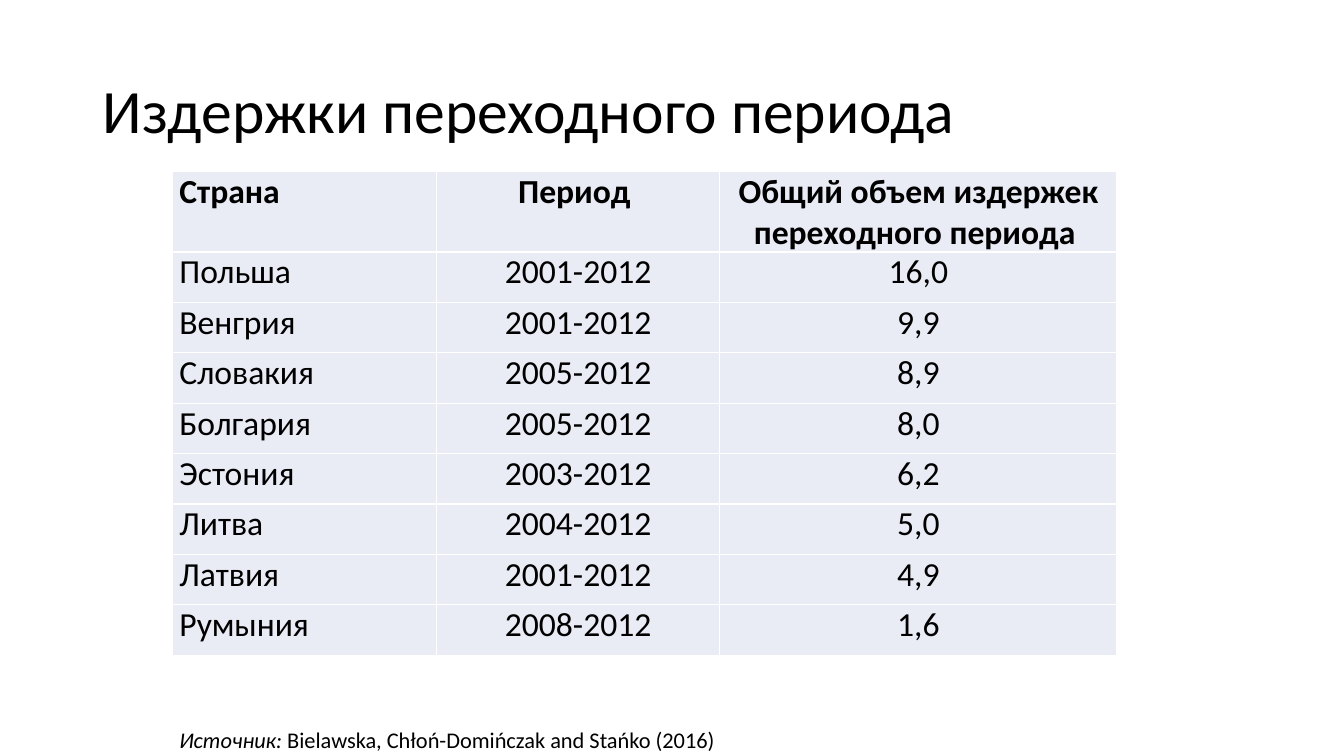
from pptx import Presentation
from pptx.dml.color import RGBColor
from pptx.enum.text import MSO_ANCHOR, PP_ALIGN
from pptx.oxml import parse_xml
from pptx.oxml.ns import nsdecls
from pptx.util import Inches, Pt

LEFT, CENTER = PP_ALIGN.LEFT, PP_ALIGN.CENTER
TOP, MIDDLE = MSO_ANCHOR.TOP, MSO_ANCHOR.MIDDLE

# Content
TITLE = "Издержки переходного периода"
HEADER = ("Страна", "Период ", "Общий объем издержек переходного периода ")
COSTS = [
    ("Польша", "2001-2012", "16,0"),
    ("Венгрия", "2001-2012", "9,9"),
    ("Словакия", "2005-2012", "8,9"),
    ("Болгария", "2005-2012", "8,0"),
    ("Эстония", "2003-2012", "6,2"),
    ("Литва", "2004-2012", "5,0"),
    ("Латвия", "2001-2012", "4,9"),
    ("Румыния", "2008-2012", "1,6"),
]
SOURCE = [("Источник: ", True),
          ("Bielawska, Chłoń-Domińczak and Stańko (2016)", False)]

# Layout, in inches
SLIDE_W, SLIDE_H = 13.33, 7.5
TABLE_LEFT, TABLE_TOP = 1.71, 1.7
COLUMNS = (2.62, 2.81, 3.94)
HEADER_H, ROW_H = 0.79, 0.5
CELL_MARGIN = 0.07
FONT, BLACK, WHITE, CELL_FILL = "Calibri", "000000", "FFFFFF", "E9EBF5"


def color(hex_code):
    return RGBColor.from_string(hex_code)


def write(tf, runs, size, bold=False, align=LEFT, before=0, line=1.0):
    """Fill the first paragraph with (text, italic) runs."""
    tf.word_wrap = True
    p = tf.paragraphs[0]
    p.alignment, p.space_before, p.line_spacing = align, Pt(before), line
    for text, italic in runs:
        r = p.add_run()
        r.text = text
        r.font.name, r.font.size = FONT, Pt(size)
        r.font.bold, r.font.italic = bold, italic
        r.font.color.rgb = color(BLACK)


def add_text(s, box, runs, size, anchor=TOP, **fmt):
    tf = s.shapes.add_textbox(*map(Inches, box)).text_frame
    tf.vertical_anchor = anchor
    write(tf, runs, size, **fmt)


def set_borders(cell, hex_code, width):
    tc_pr = cell._tc.get_or_add_tcPr()
    for i, side in enumerate(("lnL", "lnR", "lnT", "lnB")):
        tc_pr.insert(i, parse_xml(
            f'<a:{side} {nsdecls("a")} w="{Pt(width)}"><a:solidFill>'
            f'<a:srgbClr val="{hex_code}"/></a:solidFill></a:{side}>'))


def add_cost_table(s):
    rows = [HEADER] + COSTS
    heights = [HEADER_H] + [ROW_H] * len(COSTS)
    table = s.shapes.add_table(
        len(rows), len(COLUMNS), Inches(TABLE_LEFT), Inches(TABLE_TOP),
        Inches(sum(COLUMNS)), Inches(sum(heights))).table
    for column, width in zip(table.columns, COLUMNS):
        column.width = Inches(width)
    for i, (values, height) in enumerate(zip(rows, heights)):
        table.rows[i].height = Inches(height)
        for j, value in enumerate(values):
            cell = table.cell(i, j)
            cell.margin_left = cell.margin_right = Inches(CELL_MARGIN)
            cell.margin_top = cell.margin_bottom = 0
            cell.fill.solid()
            cell.fill.fore_color.rgb = color(CELL_FILL)
            set_borders(cell, WHITE, 1)
            spaced = j == 0 or (i > 0 and j == 2)
            write(cell.text_frame, [(value, False)], 24, bold=i == 0,
                  align=CENTER if j else LEFT, before=10 if spaced else 0)


def main():
    prs = Presentation()
    prs.slide_width, prs.slide_height = Inches(SLIDE_W), Inches(SLIDE_H)
    s = prs.slides.add_slide(prs.slide_layouts[6])

    # Title, source line, table
    add_text(s, (0.92, 0.4, 11.5, 1.45), [(TITLE, False)], 44,
             anchor=MIDDLE, line=0.9)
    add_text(s, (1.68, 7.15, 9.98, 0.37), SOURCE, 16)
    add_cost_table(s)

    prs.save("out.pptx")


if __name__ == "__main__":
    main()
